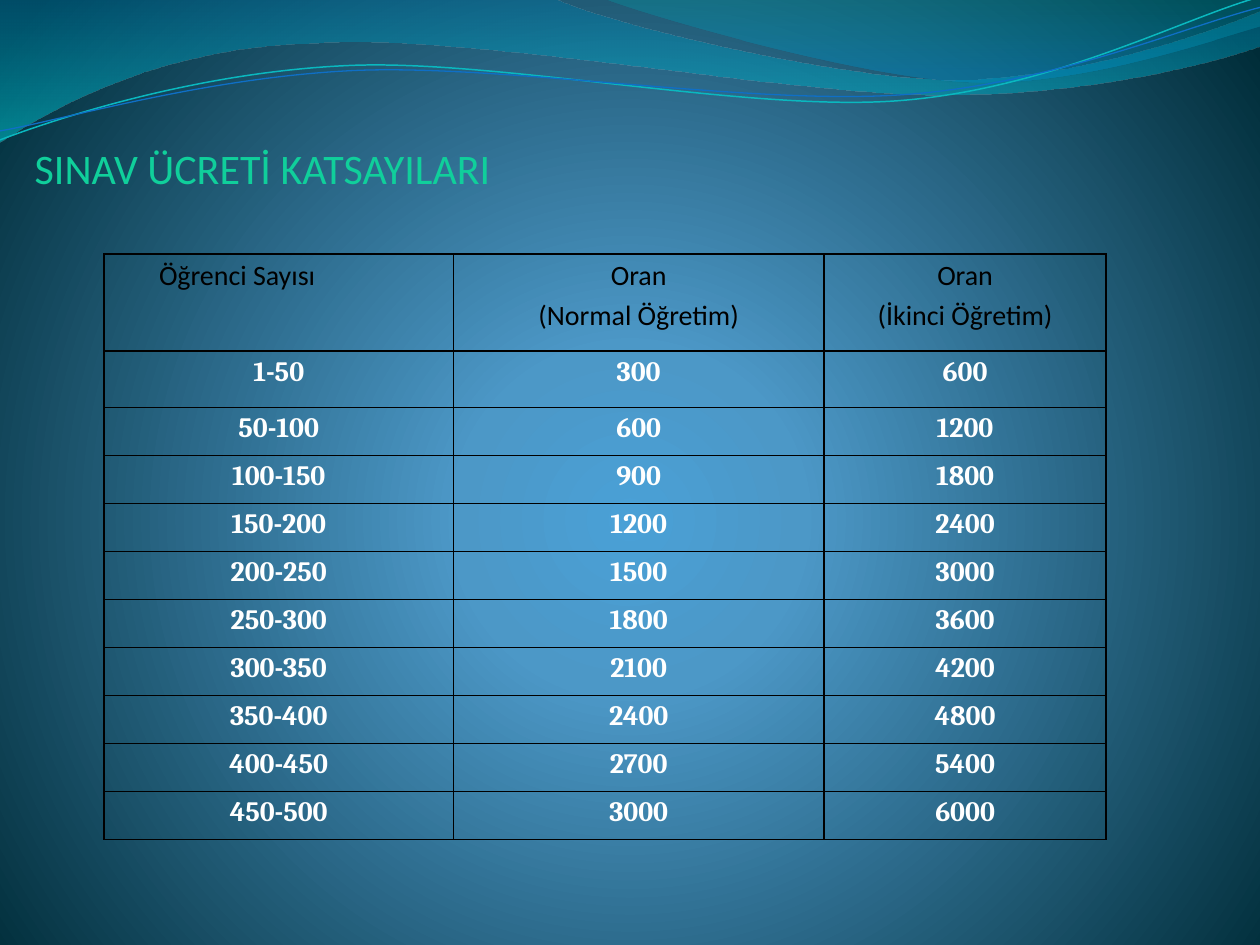
import math

from lxml import etree
from pptx import Presentation
from pptx import util as u
from pptx.dml.color import RGBColor
from pptx.enum import text
from pptx.oxml.ns import qn

BLACK = RGBColor(0x00, 0x00, 0x00)
WHITE = RGBColor(0xFF, 0xFF, 0xFF)
GREEN = RGBColor(0x10, 0xCF, 0x9B)
TEAL = RGBColor(0x0A, 0xB8, 0xBF)
BLUE = RGBColor(0x0F, 0x6F, 0xC6)
GLOW = RGBColor(0x4A, 0xA0, 0xD6)
SKY = RGBColor(0x4C, 0x98, 0xC7)
NIGHT = RGBColor(0x00, 0x2C, 0x38)
WAVE_TOP = RGBColor(0x00, 0x74, 0xA1)
WAVE_BOTTOM = RGBColor(0x00, 0xC6, 0xCF)
CREST_TOP = RGBColor(0x00, 0xA1, 0xA9)
CREST_BOTTOM = RGBColor(0x00, 0x8B, 0xBF)


def set_gradient(fill, owner, stops, radial=False):
    """Give a fill its stops of (position %, colour, opacity %)."""
    fill.gradient()
    gradient = next(owner.iter(qn("a:gradFill")))
    for child in list(gradient):
        gradient.remove(child)
    stop_list = etree.SubElement(gradient, qn("a:gsLst"))
    for position, colour, opacity in stops:
        stop = etree.SubElement(stop_list, qn("a:gs"), pos=str(position * 1000))
        tint = etree.SubElement(stop, qn("a:srgbClr"), val=str(colour))
        if opacity < 100:
            etree.SubElement(tint, qn("a:alpha"), val=str(opacity * 1000))
    if radial:
        shade = etree.SubElement(gradient, qn("a:path"), path="circle")
        etree.SubElement(shade, qn("a:fillToRect"),
                         l="10000", t="110000", r="10000", b="100000")
    else:
        etree.SubElement(gradient, qn("a:lin"), ang="5400000", scaled="0")


def add_curve(page, start, pieces, close):
    """Draw straight pieces (one point) and Bezier pieces (three points), in cm."""
    builder = page.shapes.build_freeform(u.Cm(start[0]), u.Cm(start[1]))
    builder.add_line_segments([(u.Cm(x), u.Cm(y)) for piece in pieces for x, y in piece],
                              close=close)
    curve = builder.convert_to_shape()
    curve.shadow.inherit = False
    # Turn each run of three segments into one Bezier segment
    segments = iter(list(curve.element.iter(qn("a:lnTo"))))
    for piece in pieces:
        group = [next(segments) for _ in piece]
        if len(group) == 3:
            bezier = etree.Element(qn("a:cubicBezTo"))
            group[0].addprevious(bezier)
            for segment in group:
                bezier.append(segment[0])
                segment.getparent().remove(segment)
    return curve


deck = Presentation()
deck.slide_width, deck.slide_height = u.Cm(25.4), u.Cm(19.05)
page = deck.slides.add_slide(deck.slide_layouts[6])

# Background glow
set_gradient(page.background.fill, page.element,
             [(0, GLOW, 100), (22, SKY, 100), (100, NIGHT, 100)], radial=True)

# Filled waves
waves = [
    ((0, 0),
     [[(11.18, -0.03)],
      [(12.09, 0.43), (16.87, 1.6), (19.25, 1.6)],
      [(21.67, 1.6), (24.33, 0.66), (25.4, 0.23)],
      [(25.43, 0.91)],
      [(24.97, 1.12), (22.1, 1.93), (18.95, 1.91)],
      [(15.8, 1.91), (9.7, 0.71), (6.53, 0.86)],
      [(3.28, 0.91), (1.17, 2.11), (-0.03, 2.87)]],
     [(0, WAVE_TOP, 45), (100, WAVE_BOTTOM, 55)]),
    ((12.17, -0.03),
     [[(12.93, 0.28), (17.32, 1.57), (19.53, 1.65)],
      [(21.74, 1.75), (24.41, 0.81), (25.4, 0.53)],
      [(25.4, 0)]],
     [(0, CREST_TOP, 30), (80, CREST_BOTTOM, 45)]),
]
for start, pieces, stops in waves:
    wave = add_curve(page, start, pieces, close=True)
    set_gradient(wave.fill, wave.element, stops)
    wave.line.fill.background()

# Thin wave lines, laid out level about their centre and then tilted
TILT = -2.7
cosine, sine = math.cos(math.radians(TILT)), math.sin(math.radians(TILT))
strands = [
    ((12.67, 1.46),
     [[(0, 2.82)],
      [(1.22, 2.36), (4.01, 1.45), (7.04, 1.32)],
      [(10.03, 1.19), (15.06, 2.26), (18.11, 2.03)],
      [(21.16, 1.8), (23.83, 0.38), (25.35, -0.05)]], TEAL, 0.85),
    ((12.69, 1.5),
     [[(0, 2.64)],
      [(1.19, 2.44), (4.17, 1.55), (7.19, 1.42)],
      [(10.24, 1.3), (15.16, 2.13), (18.21, 1.91)],
      [(21.23, 1.7), (23.9, 0.53), (25.4, 0.15)]], BLUE, 0.75),
]
for (middle, centre), pieces, colour, width in strands:
    level = [[(middle + (x - middle) * cosine + (y - centre) * sine,
               centre - (x - middle) * sine + (y - centre) * cosine)
              for x, y in piece] for piece in pieces]
    strand = add_curve(page, level[0][0], level[1:], close=False)
    strand.rotation = TILT
    strand.fill.background()
    strand.line.color.rgb = colour
    strand.line.width = u.Pt(width)

# Title
box = page.shapes.add_textbox(u.Cm(0.7), u.Cm(0.72), u.Cm(22.86), u.Cm(3.17))
frame = box.text_frame
frame.word_wrap = True
frame.vertical_anchor = text.MSO_ANCHOR.BOTTOM
frame.margin_left = frame.margin_right = frame.margin_bottom = 0
frame.margin_top = u.Cm(0.13)
frame.text = "SINAV ÜCRETİ KATSAYILARI"
span = frame.paragraphs[0].runs[0]
span.font.name, span.font.size = "Calibri", u.Pt(24)
span.font.color.rgb = GREEN

# Fee table: each band of 50 students adds 300, doubled for evening teaching
ranges = ["1-50"] + [f"{low}-{low + 50}" for low in range(50, 500, 50)]
rows = [["Öğrenci Sayısı", "Oran\n(Normal Öğretim)", "Oran\n(İkinci Öğretim)"]]
for number, label in enumerate(ranges, start=1):
    rows.append([label, str(300 * number), str(600 * number)])
widths = [7.04, 7.47, 5.69]
heights = [1.96, 1.14] + [8.71 / 9] * 9

table = page.shapes.add_table(len(rows), len(widths), u.Cm(2.1), u.Cm(5.12),
                              u.Cm(sum(widths)), u.Cm(sum(heights))).table
table.first_row = table.horz_banding = False
for column, width in zip(table.columns, widths):
    column.width = u.Cm(width)
for row, height in zip(table.rows, heights):
    row.height = u.Cm(height)

for row_number, values in enumerate(rows):
    header = row_number == 0
    for column_number, value in enumerate(values):
        cell = table.cell(row_number, column_number)
        cell.margin_left = cell.margin_right = u.Cm(0.18)
        cell.margin_top = cell.margin_bottom = 0
        if header and column_number == 0:
            cell.margin_right = u.Cm(1.86)  # first heading sits left of centre
        cell.text_frame.text = value
        for para in cell.text_frame.paragraphs:
            para.alignment = text.PP_ALIGN.CENTER
            para.line_spacing = 1.15
            for span in para.runs:
                span.font.name = "Calibri" if header else "Cambria"
                span.font.size = u.Pt(16)
                span.font.bold = not header
                span.font.color.rgb = BLACK if header else WHITE
        # Borders come before the fill in the cell properties
        properties = cell._tc.get_or_add_tcPr()
        for side in ("lnL", "lnR", "lnT", "lnB"):
            border = etree.SubElement(properties, qn(f"a:{side}"), w=str(u.Pt(1)))
            paint = etree.SubElement(border, qn("a:solidFill"))
            etree.SubElement(paint, qn("a:srgbClr"), val=str(BLACK))
        cell.fill.background()

deck.save("out.pptx")
